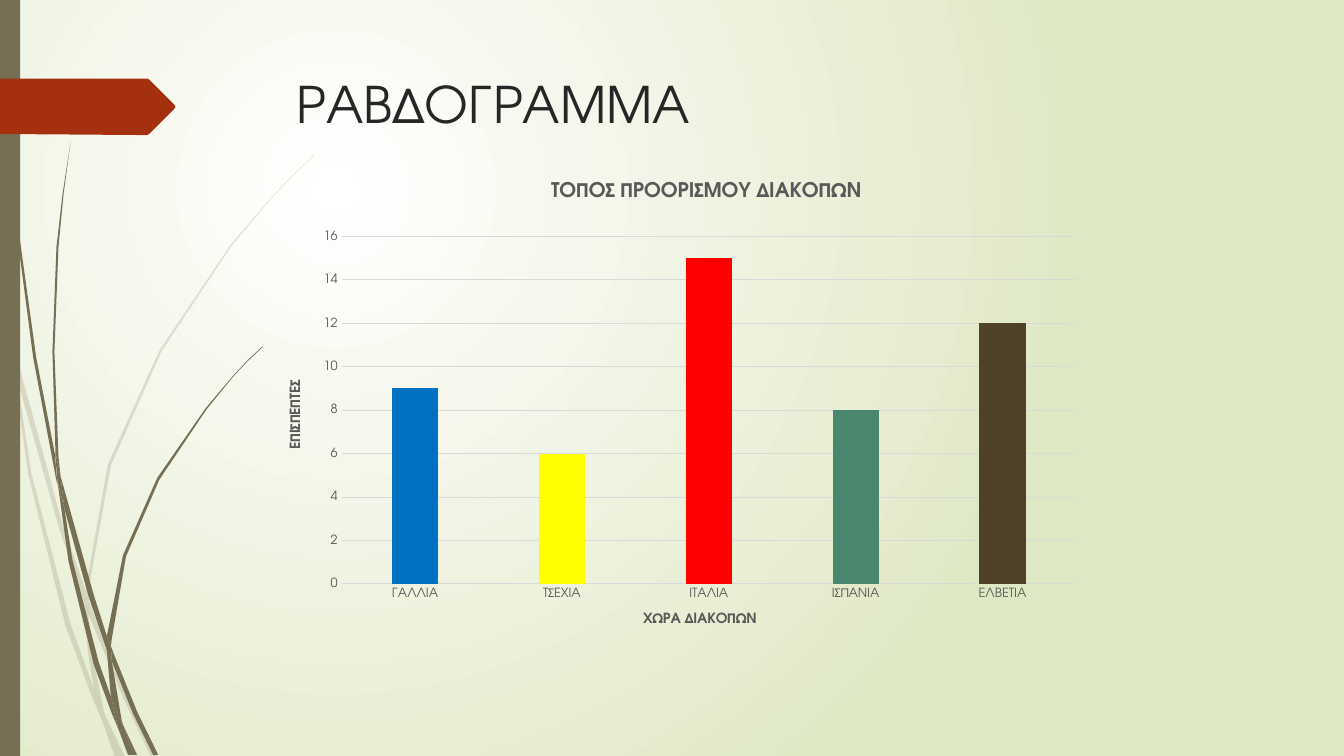
from lxml import etree
from pptx import Presentation
from pptx.chart.data import CategoryChartData
from pptx.dml.color import RGBColor
from pptx.enum.chart import XL_CHART_TYPE, XL_TICK_MARK
from pptx.enum.shapes import MSO_SHAPE
from pptx.oxml import parse_xml
from pptx.oxml.ns import nsdecls, qn
from pptx.util import Inches, Pt

COLUMNS = XL_CHART_TYPE.COLUMN_CLUSTERED
NO_TICK = XL_TICK_MARK.NONE
RECTANGLE = MSO_SHAPE.RECTANGLE

FONT = "TeX Gyre Adventor"
WHITE = RGBColor(0xFF, 0xFF, 0xFF)
PALE_GREEN = RGBColor(0xDF, 0xE8, 0xC4)
OLIVE = RGBColor(0x76, 0x6F, 0x54)
RUST = RGBColor(0xA5, 0x30, 0x10)
INK = RGBColor(0x26, 0x26, 0x26)
GREY = RGBColor(0x59, 0x59, 0x59)
GRID = RGBColor(0xD9, 0xD9, 0xD9)

VISITORS = [
    ("ΓΑΛΛΙΑ", 9, RGBColor(0x00, 0x70, 0xC0)),
    ("ΤΣΕΧΙΑ", 6, RGBColor(0xFF, 0xFF, 0x00)),
    ("ΙΤΑΛΙΑ", 15, RGBColor(0xFF, 0x00, 0x00)),
    ("ΙΣΠΑΝΙΑ", 8, RGBColor(0x4B, 0x86, 0x6E)),
    ("ΕΛΒΕΤΙΑ", 12, RGBColor(0x50, 0x42, 0x28)),
]

# Outline points are in hundredths of an inch.
PALE_GRASS = [
    [(11, 350), (9, 322), (0, 282), (0, 299), (10, 344)],
    [(58, 522), (84, 599), (85, 586), (62, 520), (14, 345), (17, 376)],
    [(92, 607), (88, 596), (88, 610), (123, 694), (150, 751), (155, 751), (127, 692)],
    [(119, 751), (124, 751), (105, 711)],
    [(93, 683), (70, 619), (31, 469), (17, 376), (11, 350), (28, 470), (65, 621),
     (92, 693), (101, 714), (99, 707)],
    [(84, 599), (87, 646), (93, 683), (96, 692), (105, 711), (103, 706), (91, 646),
     (88, 610), (88, 608)],
    [(88, 584), (110, 462), (160, 349), (229, 245), (268, 198), (290, 175), (312, 154),
     (312, 153), (289, 175), (268, 197), (228, 244), (158, 348), (107, 461), (85, 584),
     (85, 586), (88, 596)],
    [(101, 714), (114, 751), (119, 751)],
    [(88, 608), (88, 610), (88, 596), (85, 586), (84, 599)],
    [(96, 692), (93, 683), (99, 707), (101, 714), (119, 751), (105, 711)],
]
DARK_GRASS = [
    [(7, 110), (17, 233), (33, 355), (56, 477), (57, 481), (55, 457), (55, 453),
     (36, 355), (19, 232), (8, 109), (5, 48), (4, 0), (3, 0), (4, 48)],
    [(88, 592), (106, 645), (106, 633), (106, 631), (93, 590), (60, 472), (64, 505)],
    [(113, 649), (110, 641), (111, 656), (132, 708), (152, 749), (157, 749), (136, 706)],
    [(110, 691), (98, 657), (72, 556), (64, 505), (57, 477), (68, 557), (93, 659),
     (111, 708), (117, 722), (116, 717)],
    [(60, 472), (58, 453), (54, 349), (58, 245), (63, 193), (70, 141), (62, 193),
     (56, 245), (52, 349), (55, 449)],
    [(133, 749), (136, 749), (122, 719)],
    [(57, 477), (64, 505), (60, 472), (55, 449), (55, 453)],
    [(111, 633), (125, 552), (158, 476), (205, 406), (231, 374), (245, 359), (261, 344),
     (260, 344), (245, 358), (231, 373), (204, 405), (156, 474), (122, 551), (106, 631),
     (110, 641)],
    [(117, 722), (127, 749), (131, 749)],
    [(106, 645), (110, 691), (116, 706), (122, 719), (121, 716), (111, 656), (109, 651)],
    [(106, 645), (109, 651), (111, 656), (110, 641), (106, 631), (106, 633)],
    [(116, 706), (110, 691), (116, 717), (117, 722), (130, 749), (133, 749), (122, 719)],
]
PAGE_ARROW = [(173, 108), (148, 133), (146, 134), (136, 134), (0, 133), (0, 78),
              (146, 78), (148, 79), (173, 104), (174, 106)]


def paint(shape, color):
    shape.shadow.inherit = False
    shape.fill.solid()
    shape.fill.fore_color.rgb = color
    shape.line.fill.background()


def style_font(font, color, **values):
    for name, value in {"name": FONT, **values}.items():
        setattr(font, name, value)
    font.color.rgb = color


deck = Presentation()
deck.slide_width, deck.slide_height = Inches(13.33), Inches(7.5)
page = deck.slides.add_slide(deck.slide_layouts[6])

backdrop = page.background.fill
backdrop.gradient()
for stop, color, position in zip(backdrop.gradient_stops, (WHITE, PALE_GREEN), (0, 1)):
    stop.color.rgb = color
    stop.position = position
gradient = page.background._cSld.find(".//" + qn("a:gradFill"))
gradient.remove(gradient.find(qn("a:lin")))
gradient.append(parse_xml(
    f'<a:path {nsdecls("a")} path="circle">'
    '<a:fillToRect l="50000" t="50000" r="100000" b="100000"/></a:path>'))

for outlines, opacity in ((PALE_GRASS, 20), (DARK_GRASS, 100), ([PAGE_ARROW], 100)):
    is_arrow = outlines[0] is PAGE_ARROW
    if is_arrow:
        edge = page.shapes.add_shape(RECTANGLE, 0, 0, Inches(0.2), Inches(7.5))
        paint(edge, OLIVE)
    pieces = []
    for start, *others in outlines:
        builder = page.shapes.build_freeform(*start, scale=Inches(0.01))
        builder.add_line_segments(others, close=True)
        piece = builder.convert_to_shape()
        paint(piece, RUST if is_arrow else OLIVE)
        if opacity < 100:
            tint = piece._element.spPr.find(".//" + qn("a:srgbClr"))
            etree.SubElement(tint, qn("a:alpha")).set("val", str(opacity * 1000))
        pieces.append(piece)
    if not is_arrow:
        page.shapes.add_group_shape(pieces)

heading = page.shapes.add_textbox(Inches(2.84), Inches(0.68), Inches(9.75), Inches(1.4))
heading.text_frame.word_wrap = True
span = heading.text_frame.paragraphs[0].add_run()
span.text = "ΡΑΒΔΟΓΡΑΜΜΑ"
style_font(span.font, INK, size=Pt(36))

chart_data = CategoryChartData()
chart_data.categories = [country for country, _, _ in VISITORS]
chart_data.add_series("Series 1", [count for _, count, _ in VISITORS])
chart = page.shapes.add_chart(COLUMNS, Inches(2.73), Inches(1.61), Inches(8.55),
                              Inches(4.75), chart_data).chart
chart.has_legend = False
style_font(chart.font, GREY, size=Pt(10))
chart.element.find(qn("c:chart")).addnext(parse_xml(
    f'<c:spPr {nsdecls("c", "a")}><a:noFill/><a:ln><a:noFill/></a:ln></c:spPr>'))

countries, visits = chart.category_axis, chart.value_axis
for owner, text, size in ((chart, "ΤΟΠΟΣ ΠΡΟΟΡΙΣΜΟΥ ΔΙΑΚΟΠΩΝ", 14.4),
                          (countries, "ΧΩΡΑ ΔΙΑΚΟΠΩΝ", 10),
                          (visits, "ΕΠΙΣΠΕΠΤΕΣ", 10)):
    owner.has_title = True
    frame = (owner.chart_title if owner is chart else owner.axis_title).text_frame
    frame.text = text
    style_font(frame.paragraphs[0].runs[0].font, GREY, size=Pt(size), bold=True)
    if owner is visits:
        frame._txBody.bodyPr.set("rot", "-5400000")
        frame._txBody.bodyPr.set("vert", "horz")
chart.chart_title.include_in_layout = False

for axis in (countries, visits):
    axis.major_tick_mark = axis.minor_tick_mark = NO_TICK
    style_font(axis.tick_labels.font, GREY, size=Pt(9))
for name, value in {"minimum_scale": 0, "maximum_scale": 16, "major_unit": 2,
                    "has_major_gridlines": True}.items():
    setattr(visits, name, value)
visits.format.line.fill.background()
for line in (countries.format.line, visits.major_gridlines.format.line):
    line.color.rgb = GRID
    line.width = Pt(0.75)

plot = chart.plots[0]
for name, value in {"gap_width": 219, "overlap": -27, "vary_by_categories": False}.items():
    setattr(plot, name, value)
bars = plot.series[0]
bars.format.fill.solid()
bars.format.fill.fore_color.rgb = RUST
for index, (_, _, color) in enumerate(VISITORS):
    bar_fill = bars.points[index].format.fill
    bar_fill.solid()
    bar_fill.fore_color.rgb = color

plot_area = chart.element.find(".//" + qn("c:plotArea"))
for old_layout in plot_area.findall(qn("c:layout")):
    plot_area.remove(old_layout)
layout = parse_xml(f'<c:layout {nsdecls("c")}><c:manualLayout/></c:layout>')
for tag, value in {"layoutTarget": "inner", "xMode": "edge", "yMode": "edge",
                   "x": 0.077, "y": 0.155, "w": 0.852, "h": 0.726}.items():
    etree.SubElement(layout[0], qn(f"c:{tag}")).set("val", str(value))
plot_area.insert(0, layout)

deck.save("out.pptx")
